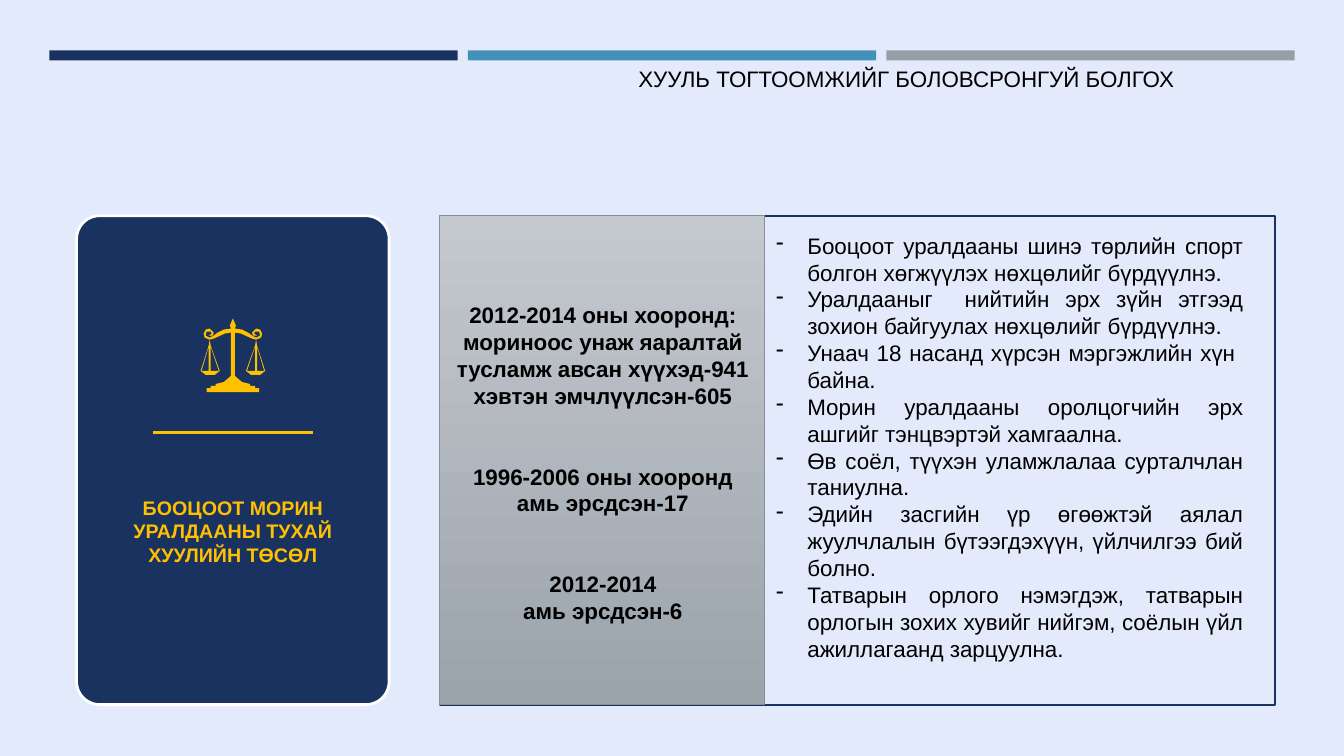
from lxml import etree
from pptx import Presentation
from pptx.dml.color import RGBColor
from pptx.enum import shapes, text
from pptx.oxml import ns
from pptx.util import Inches, Pt

NAVY = RGBColor(0x1A, 0x32, 0x60)
BLUE = RGBColor(0x45, 0x90, 0xB8)
GREY = RGBColor(0x96, 0x9F, 0xA7)
PALE = RGBColor(0xE3, 0xEA, 0xFB)
GOLD = RGBColor(0xFF, 0xC0, 0x00)
LIGHT = RGBColor(0xC4, 0xC9, 0xCE)
STEEL = RGBColor(0x9B, 0xA3, 0xAB)
EDGE = RGBColor(0x85, 0x8F, 0x99)
WHITE = RGBColor(0xFF, 0xFF, 0xFF)
BLACK = RGBColor(0, 0, 0)

RECT = shapes.MSO_SHAPE.RECTANGLE
ROUND = shapes.MSO_SHAPE.ROUNDED_RECTANGLE
CENTER = text.PP_ALIGN.CENTER
JUSTIFY = text.PP_ALIGN.JUSTIFY

TITLE = "ХУУЛЬ ТОГТООМЖИЙГ БОЛОВСРОНГУЙ БОЛГОХ"
BILL = "БООЦООТ МОРИН УРАЛДААНЫ ТУХАЙ ХУУЛИЙН ТӨСӨЛ"
STATS = [
    ["2012-2014 оны хооронд:",
     "мориноос унаж яаралтай тусламж авсан хүүхэд-941",
     "хэвтэн эмчлүүлсэн-605"],
    ["1996-2006 оны хооронд", "амь эрсдсэн-17"],
    ["2012-2014", "амь эрсдсэн-6"],
]
GOALS = [
    "Бооцоот уралдааны шинэ төрлийн спорт болгон хөгжүүлэх нөхцөлийг бүрдүүлнэ.",
    "Уралдааныг  нийтийн эрх зүйн этгээд зохион байгуулах нөхцөлийг бүрдүүлнэ.",
    "Унаач 18 насанд хүрсэн мэргэжлийн хүн  байна.",
    "Морин уралдааны оролцогчийн эрх ашгийг тэнцвэртэй хамгаална.",
    "Өв соёл, түүхэн уламжлалаа сурталчлан таниулна.",
    "Эдийн засгийн үр өгөөжтэй аялал жуулчлалын бүтээгдэхүүн, үйлчилгээ бий болно.",
    "Татварын орлого нэмэгдэж, татварын орлогын зохих хувийг нийгэм, "
    "соёлын үйл ажиллагаанд зарцуулна.",
]

# Scales outline: distance from the axis, height on the slide
AXIS = 2.31
STAND = [
    (0, 3.16), (.03, 3.23), (.02, 3.26), (.09, 3.27), (.15, 3.3), (.19, 3.33),
    (.23, 3.35), (.27, 3.33), (.26, 3.29), (.22, 3.29), (.21, 3.31),
    (.24, 3.33), (.2, 3.33), (.19, 3.3), (.23, 3.26), (.27, 3.27),
    (.29, 3.31), (.28, 3.35), (.23, 3.37), (.19, 3.36), (.08, 3.31),
    (.02, 3.3), (.02, 3.73), (.09, 3.79), (.17, 3.81), (.17, 3.83),
    (.22, 3.83), (.22, 3.85), (.26, 3.85), (.26, 3.89), (0, 3.89)]
PAN = [
    [(.23, 3.37), (.24, 3.43), (.32, 3.68), (.27, 3.72), (.18, 3.72),
     (.13, 3.68), (.22, 3.43)],
    [(.24, 3.44), (.24, 3.68), (.31, 3.68)],
    [(.22, 3.44), (.22, 3.68), (.14, 3.68)]]


def place(*box):
    return [Inches(n) for n in box]


def block(slide, kind, box, fill=None, line=None, width=1):
    shape = slide.shapes.add_shape(kind, *place(*box))
    shape.shadow.inherit = False
    if fill is None:
        shape.fill.background()
    else:
        shape.fill.solid()
        shape.fill.fore_color.rgb = fill
    if line is None:
        shape.line.fill.background()
    else:
        shape.line.color.rgb = line
        shape.line.width = Pt(width)
    return shape


def write(frame, lines, align=CENTER, size=16, color=BLACK, bold=False):
    frame.word_wrap = True
    for i, line in enumerate(lines):
        para = frame.paragraphs[0] if i == 0 else frame.add_paragraph()
        para.text = line
        para.alignment = align
        font = para.font
        font.name, font.size, font.bold = "Arial", Pt(size), bold
        font.color.rgb = color
    return frame


def label(slide, box, lines, **style):
    frame = slide.shapes.add_textbox(*place(*box)).text_frame
    return write(frame, lines, **style)


def dash(para):
    props = para._p.get_or_add_pPr()
    props.set("marL", str(Inches(.31)))
    props.set("indent", str(-Inches(.31)))
    etree.SubElement(props, ns.qn("a:buChar")).set("char", "-")


def rule(slide, x1, x2, y):
    line = slide.shapes.add_connector(
        shapes.MSO_CONNECTOR.STRAIGHT, *place(x1, y, x2, y))
    line.line.color.rgb = GOLD
    line.line.width = Pt(2.25)
    etree.SubElement(line._element.spPr, ns.qn("a:effectLst"))


def scales(slide):
    def side(points, sign):
        return [(Inches(AXIS + sign * x), Inches(y)) for x, y in points]

    loops = [side(STAND, -1) + side(STAND[::-1], 1)]
    loops += [side(part, sign) for sign in (-1, 1) for part in PAN]
    pen = slide.shapes.build_freeform(*loops[0][0])
    for i, loop in enumerate(loops):
        if i:
            pen.move_to(*loop[0])
        pen.add_line_segments(loop[1:], close=True)
    icon = pen.convert_to_shape()
    icon.shadow.inherit = False
    icon.fill.solid()
    icon.fill.fore_color.rgb = GOLD
    icon.line.fill.background()


def main():
    deck = Presentation()
    deck.slide_width, deck.slide_height = place(13.33, 7.5)
    slide = deck.slides.add_slide(deck.slide_layouts[6])
    slide.background.fill.solid()
    slide.background.fill.fore_color.rgb = PALE

    # Top bars
    for i, color in enumerate((NAVY, BLUE, GREY)):
        block(slide, RECT, (.49 + 4.15 * i, .5, 4.05, .1), color)

    # Bill card
    card = block(slide, ROUND, (.76, 2.14, 3.1, 4.85), NAVY, WHITE, 2)
    card.adjustments[0] = .074
    frame = write(card.text_frame, [BILL], size=14, color=GOLD, bold=True)
    frame.vertical_anchor = text.MSO_ANCHOR.MIDDLE
    frame.margin_top = Inches(1.45)
    scales(slide)
    rule(slide, 1.52, 3.1, 4.29)

    # Goals
    block(slide, RECT, (4.36, 2.14, 8.29, 4.85), line=NAVY, width=1.5)
    goals = label(slide, (7.6, 2.25, 4.83, 4.95), GOALS, align=JUSTIFY)
    for para in goals.paragraphs:
        dash(para)

    # Figures
    panel = block(slide, RECT, (4.36, 2.14, 3.22, 4.85), LIGHT, EDGE)
    panel.fill.gradient()
    panel.fill.gradient_angle = 270
    for stop, color in zip(panel.fill.gradient_stops, (LIGHT, STEEL)):
        stop.color.rgb = color
    stats = label(slide, (4.38, 2.14, 3.2, 4.68), sum(STATS, []), bold=True)
    stats.margin_top = Inches(.85)
    heads = [group[0] for group in STATS[1:]]
    for para in stats.paragraphs:
        if para.text in heads:
            para.space_before = Pt(38.4)

    # Title
    label(slide, (3.47, .6, 11.04, .37), [TITLE])
    deck.save("out.pptx")


if __name__ == "__main__":
    main()
